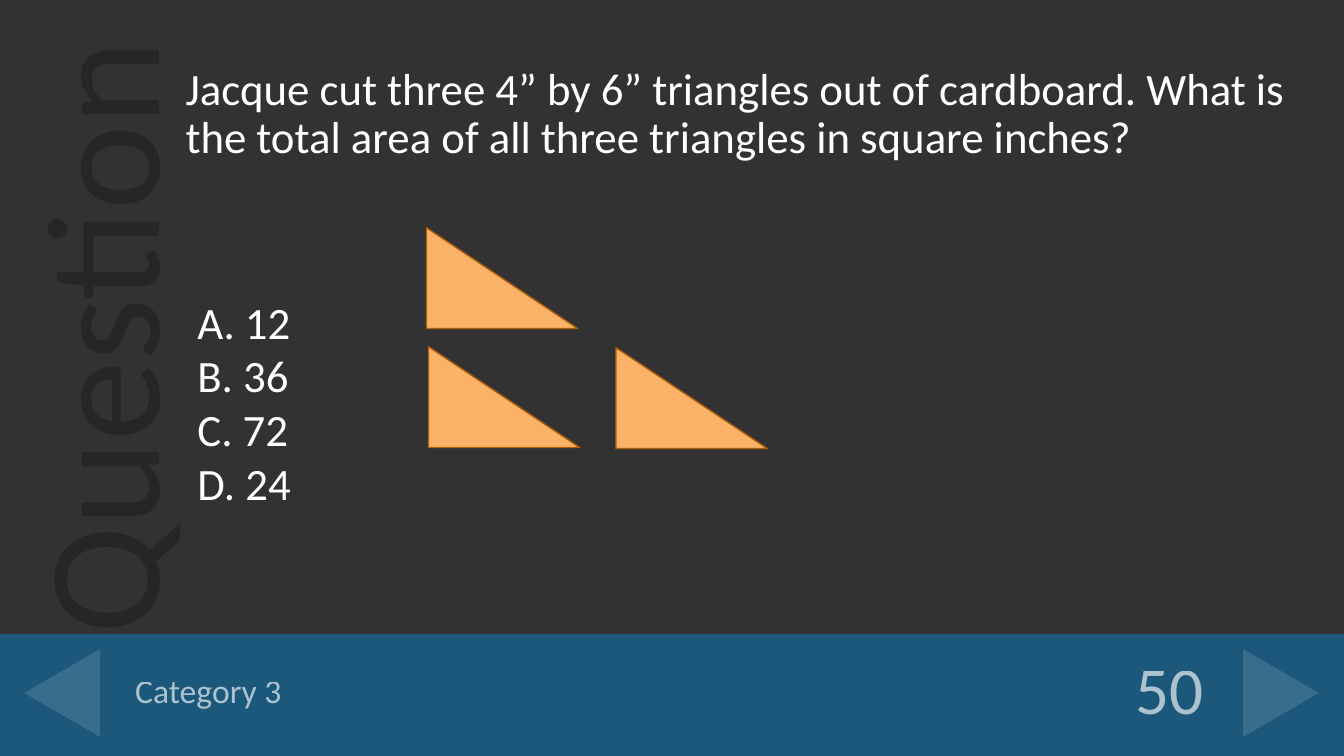
from dataclasses import dataclass

import lxml.etree
import pptx
import pptx.dml.color
import pptx.enum.shapes
import pptx.enum.text
import pptx.oxml.ns
import pptx.util

Inches = pptx.util.Inches
Pt = pptx.util.Pt
RGBColor = pptx.dml.color.RGBColor
Shape = pptx.enum.shapes.MSO_SHAPE
Align = pptx.enum.text.PP_ALIGN
Anchor = pptx.enum.text.MSO_ANCHOR
qn = pptx.oxml.ns.qn

BACKGROUND = RGBColor(0x32, 0x32, 0x32)
WATERWORD = RGBColor(0x26, 0x26, 0x26)
BAND = RGBColor(0x1B, 0x58, 0x7C)
WHITE = RGBColor(0xFF, 0xFF, 0xFF)
CARDBOARD = RGBColor(0xF9, 0xB2, 0x68)
CARDBOARD_EDGE = RGBColor(0xB2, 0x5E, 0x07)
FONT = "Calibri"


@dataclass(frozen=True)
class Box:
    left: float
    top: float
    width: float
    height: float

    def lengths(self) -> tuple:
        return tuple(Inches(v) for v in (self.left, self.top, self.width, self.height))


@dataclass(frozen=True)
class Figure:
    box: Box
    kind: int
    fill: RGBColor
    edge: RGBColor | None = None
    rotation: float = 0
    opacity: int = 100


FOOTER_FIGURES = [
    Figure(Box(0, 6.29, 13.33, 1.21), Shape.RECTANGLE, BAND),
    Figure(Box(0.18, 6.5, 0.87, 0.75), Shape.ISOSCELES_TRIANGLE, WHITE, rotation=270, opacity=13),
    Figure(Box(12.27, 6.5, 0.87, 0.75), Shape.ISOSCELES_TRIANGLE, WHITE, rotation=90, opacity=13),
]
CARDBOARD_TRIANGLES = [
    Figure(Box(left, top, 1.5, 1), Shape.RIGHT_TRIANGLE, CARDBOARD, CARDBOARD_EDGE)
    for left, top in [(4.23, 2.26), (4.25, 3.44), (6.11, 3.45)]
]


def set_opacity(element, percent: int) -> None:
    """Make every explicit colour under the element partly transparent."""
    if percent < 100:
        for color in element.iter(qn("a:srgbClr")):
            lxml.etree.SubElement(color, qn("a:alpha"), val=str(percent * 1000))


def draw_figure(slide, figure: Figure) -> None:
    shape = slide.shapes.add_shape(figure.kind, *figure.box.lengths())
    shape.shadow.inherit = False
    shape.rotation = figure.rotation
    shape.fill.solid()
    shape.fill.fore_color.rgb = figure.fill
    if figure.edge is None:
        shape.line.fill.background()
    else:
        shape.line.color.rgb = figure.edge
        shape.line.width = Pt(1)
    set_opacity(shape._element.spPr, figure.opacity)


def write_text(shape, *lines: str, size: float, color: RGBColor = WHITE,
               align=Align.LEFT, anchor=Anchor.MIDDLE, spacing: float = 1.0,
               opacity: int = 100) -> None:
    frame = shape.text_frame
    frame.word_wrap = True
    frame.auto_size = pptx.enum.text.MSO_AUTO_SIZE.NONE
    frame.vertical_anchor = anchor
    frame.text = "\n".join(lines)
    for paragraph in frame.paragraphs:
        paragraph.alignment = align
        paragraph.line_spacing = spacing
        paragraph.space_before = Pt(0)
        font = paragraph.runs[0].font
        font.name, font.size = FONT, Pt(size)
        font.color.rgb = color
        set_opacity(paragraph.runs[0]._r, opacity)
        properties = paragraph._p.get_or_add_pPr()
        properties.set("marL", "0")
        properties.set("indent", "0")
        lxml.etree.SubElement(properties, qn("a:buNone"))


def place_in_front(slide, placeholder, box: Box):
    """Move a placeholder to its box, above everything drawn so far."""
    placeholder.left, placeholder.top, placeholder.width, placeholder.height = box.lengths()
    slide.shapes._spTree.append(placeholder._element)
    return placeholder


def draw_side_word(slide) -> None:
    side_word = slide.shapes.add_textbox(*Box(-2.2, 2.18, 6.29, 1.94).lengths())
    side_word.rotation = 270
    frame = side_word.text_frame
    frame.margin_left = frame.margin_right = frame.margin_top = frame.margin_bottom = 0
    write_text(side_word, "Question", size=115, color=WATERWORD, align=Align.JUSTIFY)


def main() -> None:
    deck = pptx.Presentation()
    deck.slide_width, deck.slide_height = Inches(13.33), Inches(7.5)
    slide = deck.slides.add_slide(deck.slide_layouts.get_by_name("Two Content"))
    slide.background.fill.solid()
    slide.background.fill.fore_color.rgb = BACKGROUND
    category, question, points = list(slide.placeholders)[:3]

    draw_side_word(slide)
    for figure in FOOTER_FIGURES:
        draw_figure(slide, figure)

    place_in_front(slide, question, Box(1.74, -0.15, 11.42, 2.58))
    write_text(question, "Jacque cut three 4” by 6” triangles out of cardboard. "
               "What is the total area of all three triangles in square inches?",
               size=32, spacing=0.9)
    place_in_front(slide, points, Box(9.96, 6.45, 2.08, 0.85))
    write_text(points, "50", size=48, align=Align.RIGHT, spacing=0.9, opacity=63)
    place_in_front(slide, category, Box(1.24, 6.45, 8.72, 0.85))
    write_text(category, "Category 3", size=24, spacing=0.9, opacity=63)

    answers = slide.shapes.add_textbox(*Box(1.86, 2.87, 6.67, 2.32).lengths())
    write_text(answers, "A. 12", "B. 36", "C. 72", "D. 24", size=32, anchor=Anchor.TOP)
    for triangle in CARDBOARD_TRIANGLES:
        draw_figure(slide, triangle)

    deck.save("out.pptx")


if __name__ == "__main__":
    main()
